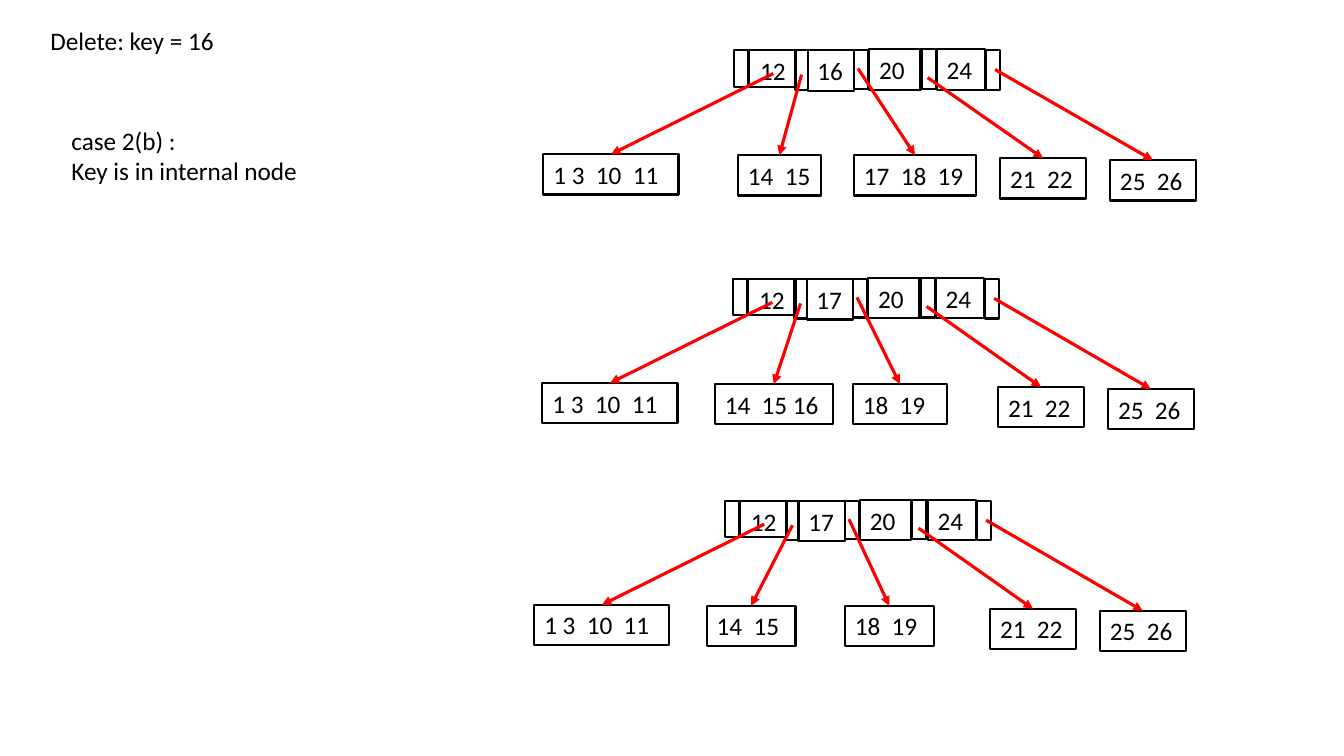
"""Build a slide showing the deletion of key 16 from a B-tree in three steps."""
from lxml import etree
from pptx import Presentation
from pptx import util as u
from pptx.dml.color import RGBColor
from pptx.enum import shapes, text
from pptx.oxml.ns import qn

PX = 9144
BLACK = RGBColor(0, 0, 0)
RED = RGBColor(255, 0, 0)

POINTER_CELLS = [(0, 1, 14, 36), (61, 1, 12, 39), (119, 1, 14, 38),
                 (186, 0, 14, 39), (250, 1, 14, 39)]
KEY_CELLS = [(15, 1, 47, 36), (73, 1, 46, 40), (134, 0, 51, 40), (201, 0, 48, 40)]
ARROW_STARTS = [(39, 24), (67, 25), (123, 19), (192, 28), (259, 20)]
LEAF_TOPS = [104, 105, 105, 108, 110]

TREES = [
    (728, 49, ["12", "16", "20", "24"],
     [("1 3  10  11", -189, 134), ("14  15", 4, 82), ("17  18  19", 119, 121),
      ("21  22", 264, 85), ("25  26", 373, 85)]),
    (727, 276, ["12", "17", "20", "24"],
     [("1 3  10  11", -189, 134), ("14  15 16", -18, 117), ("18  19", 119, 93),
      ("21  22", 263, 85), ("25  26", 372, 85)]),
    (719, 496, ["12", "17", "20", "24"],
     [("1 3  10  11", -189, 134), ("14  15", -18, 88), ("18  19", 119, 88),
      ("21  22", 263, 85), ("25  26", 372, 85)]),
]


def write(shape, content, align=text.PP_ALIGN.LEFT, right_inset=5):
    frame = shape.text_frame
    frame.text = content
    frame.word_wrap = True
    frame.auto_size = text.MSO_AUTO_SIZE.NONE
    frame.vertical_anchor = text.MSO_ANCHOR.TOP
    frame.margin_left, frame.margin_right = 10 * PX, right_inset * PX
    frame.margin_top = frame.margin_bottom = 5 * PX
    for paragraph in frame.paragraphs:
        paragraph.alignment = align
        paragraph.font.size = u.Pt(18)
        paragraph.font.name = "Calibri"
        paragraph.font.color.rgb = BLACK


def add_cell(group, left, top, width, height):
    cell = group.shapes.add_shape(shapes.MSO_SHAPE.RECTANGLE, left * PX, top * PX,
                                  width * PX, height * PX)
    cell.shadow.inherit = False
    cell.fill.background()
    cell.line.color.rgb = BLACK
    cell.line.width = u.Pt(1.5)
    return cell


presentation = Presentation()
presentation.slide_width = 1333 * PX
presentation.slide_height = 750 * PX
slide = presentation.slides.add_slide(presentation.slide_layouts[5])

title = slide.shapes.title
title.left, title.top, title.width, title.height = 40 * PX, 20 * PX, 254 * PX, 40 * PX
write(title, "Delete: key = 16")

case_note = slide.shapes.add_textbox(61 * PX, 119 * PX, 304 * PX, 71 * PX)
write(case_note, "case 2(b) :\nKey is in internal node")

for tree_left, tree_top, keys, leaves in TREES:
    group = slide.shapes.add_group_shape()

    for left, top, width, height in POINTER_CELLS:
        add_cell(group, tree_left + left, tree_top + top, width, height)

    for index, (key, (left, top, width, height)) in enumerate(zip(keys, KEY_CELLS)):
        cell = add_cell(group, tree_left + left, tree_top + top, width, height)
        if index == 0:
            write(cell, key, align=text.PP_ALIGN.CENTER, right_inset=10)
        else:
            write(cell, key)

    for (values, left, width), top, start in zip(leaves, LEAF_TOPS, ARROW_STARTS):
        leaf = add_cell(group, tree_left + left, tree_top + top, width, 40)
        write(leaf, values)
        start_x, start_y = (tree_left + start[0]) * PX, (tree_top + start[1]) * PX
        arrow = group.shapes.add_connector(shapes.MSO_CONNECTOR.STRAIGHT, start_x, start_y,
                                           leaf.left + leaf.width // 2, leaf.top)
        arrow.end_connect(leaf, 0)
        arrow.line.color.rgb = RED
        arrow.line.width = u.Pt(2.25)
        etree.SubElement(arrow.line._get_or_add_ln(), qn("a:tailEnd"), type="triangle")
        etree.SubElement(arrow._element.spPr, qn("a:effectLst"))

presentation.save("out.pptx")
